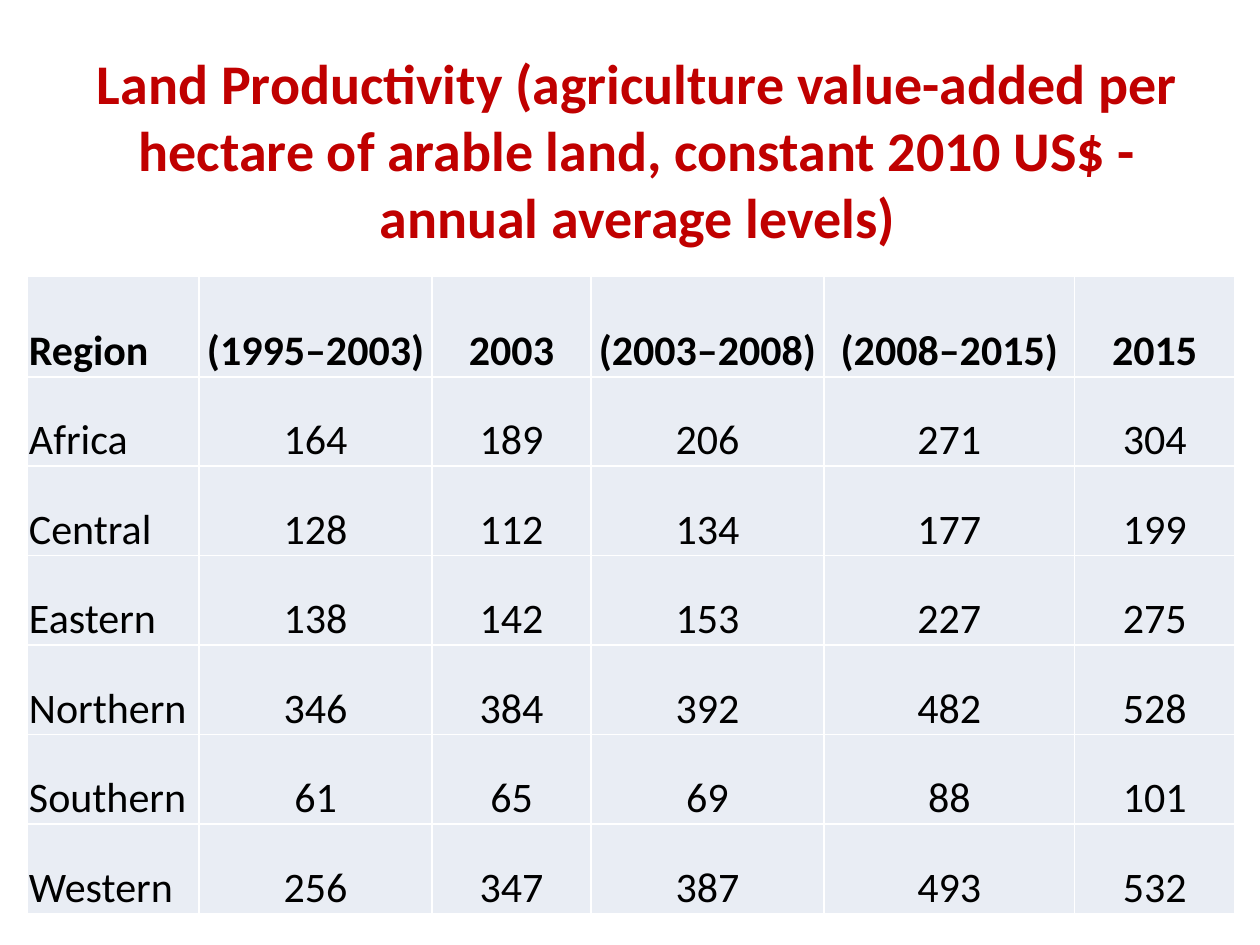
from dataclasses import dataclass

from lxml import etree
from pptx import Presentation
from pptx.dml.color import RGBColor
from pptx.enum.text import MSO_ANCHOR, MSO_AUTO_SIZE, PP_ALIGN
from pptx.oxml.ns import qn
from pptx.util import Inches, Pt

LEFT, CENTER = PP_ALIGN.LEFT, PP_ALIGN.CENTER
MIDDLE, BOTTOM = MSO_ANCHOR.MIDDLE, MSO_ANCHOR.BOTTOM
NO_AUTOFIT = MSO_AUTO_SIZE.NONE
TITLE_ONLY = 5

# Content
TITLE = ("Land Productivity (agriculture value-added per hectare of arable land, "
         "constant 2010 US$ - annual average levels)")
HEADER = ("Region", "(1995–2003)", "2003", "(2003–2008)", "(2008–2015)", "2015")
REGIONS = [
    ("Africa", 164, 189, 206, 271, 304),
    ("Central", 128, 112, 134, 177, 199),
    ("Eastern", 138, 142, 153, 227, 275),
    ("Northern", 346, 384, 392, 482, 528),
    ("Southern", 61, 65, 69, 88, 101),
    ("Western", 256, 347, 387, 493, 532),
]

# Layout, in inches
TITLE_BOX = (0.5, 0.3, 9.12, 1.77)
TABLE_LEFT, TABLE_TOP = 0.22, 2.19
COLUMN_WIDTHS = (1.36, 1.85, 1.26, 1.85, 1.99, 1.27)
HEADER_HEIGHT, ROW_HEIGHT = 0.8, 0.71
CELL_MARGIN = 0.01


@dataclass(frozen=True)
class Theme:
    font: str = "Calibri"
    title_size: int = 32
    table_size: int = 24
    title_color: str = "C00000"
    text_color: str = "000000"
    cell_fill: str = "E9EDF4"
    border_color: str = "FFFFFF"
    border_width: int = 1


THEME = Theme()


def style_paragraph(para, size, color, bold, align):
    para.alignment = align
    para.font.name = THEME.font
    para.font.size = Pt(size)
    para.font.bold = bold
    para.font.color.rgb = RGBColor.from_string(color)


def add_borders(cell):
    properties = cell._tc.get_or_add_tcPr()
    # Border lines must come before the fill
    for position, side in enumerate(("a:lnL", "a:lnR", "a:lnT", "a:lnB")):
        line = etree.Element(qn(side), w=str(Pt(THEME.border_width)))
        fill = etree.SubElement(line, qn("a:solidFill"))
        etree.SubElement(fill, qn("a:srgbClr"), val=THEME.border_color)
        properties.insert(position, line)


def fill_cell(cell, value, bold, align):
    cell.text = str(value)
    cell.vertical_anchor = BOTTOM
    cell.margin_left = cell.margin_right = cell.margin_top = Inches(CELL_MARGIN)
    cell.margin_bottom = 0
    cell.fill.solid()
    cell.fill.fore_color.rgb = RGBColor.from_string(THEME.cell_fill)
    style_paragraph(cell.text_frame.paragraphs[0], THEME.table_size,
                    THEME.text_color, bold, align)
    add_borders(cell)


def add_title(page):
    title = page.shapes.title
    title.left, title.top, title.width, title.height = map(Inches, TITLE_BOX)
    frame = title.text_frame
    frame.text = TITLE
    frame.word_wrap = True
    frame.auto_size = NO_AUTOFIT
    frame.vertical_anchor = MIDDLE
    style_paragraph(frame.paragraphs[0], THEME.title_size, THEME.title_color,
                    True, CENTER)


def add_region_table(page):
    rows = [HEADER, *REGIONS]
    heights = [HEADER_HEIGHT] + [ROW_HEIGHT] * len(REGIONS)
    table = page.shapes.add_table(
        len(rows), len(HEADER), Inches(TABLE_LEFT), Inches(TABLE_TOP),
        Inches(sum(COLUMN_WIDTHS)), Inches(sum(heights))).table
    table.horz_banding = False
    for column, width in zip(table.columns, COLUMN_WIDTHS):
        column.width = Inches(width)
    for row_index, (values, height) in enumerate(zip(rows, heights)):
        table.rows[row_index].height = Inches(height)
        for column_index, value in enumerate(values):
            fill_cell(table.cell(row_index, column_index), value,
                      bold=row_index == 0,
                      align=CENTER if column_index else LEFT)


def main():
    deck = Presentation()
    deck.slide_width, deck.slide_height = Inches(10), Inches(7.5)
    page = deck.slides.add_slide(deck.slide_layouts[TITLE_ONLY])
    add_title(page)
    add_region_table(page)
    deck.save("out.pptx")


if __name__ == "__main__":
    main()
